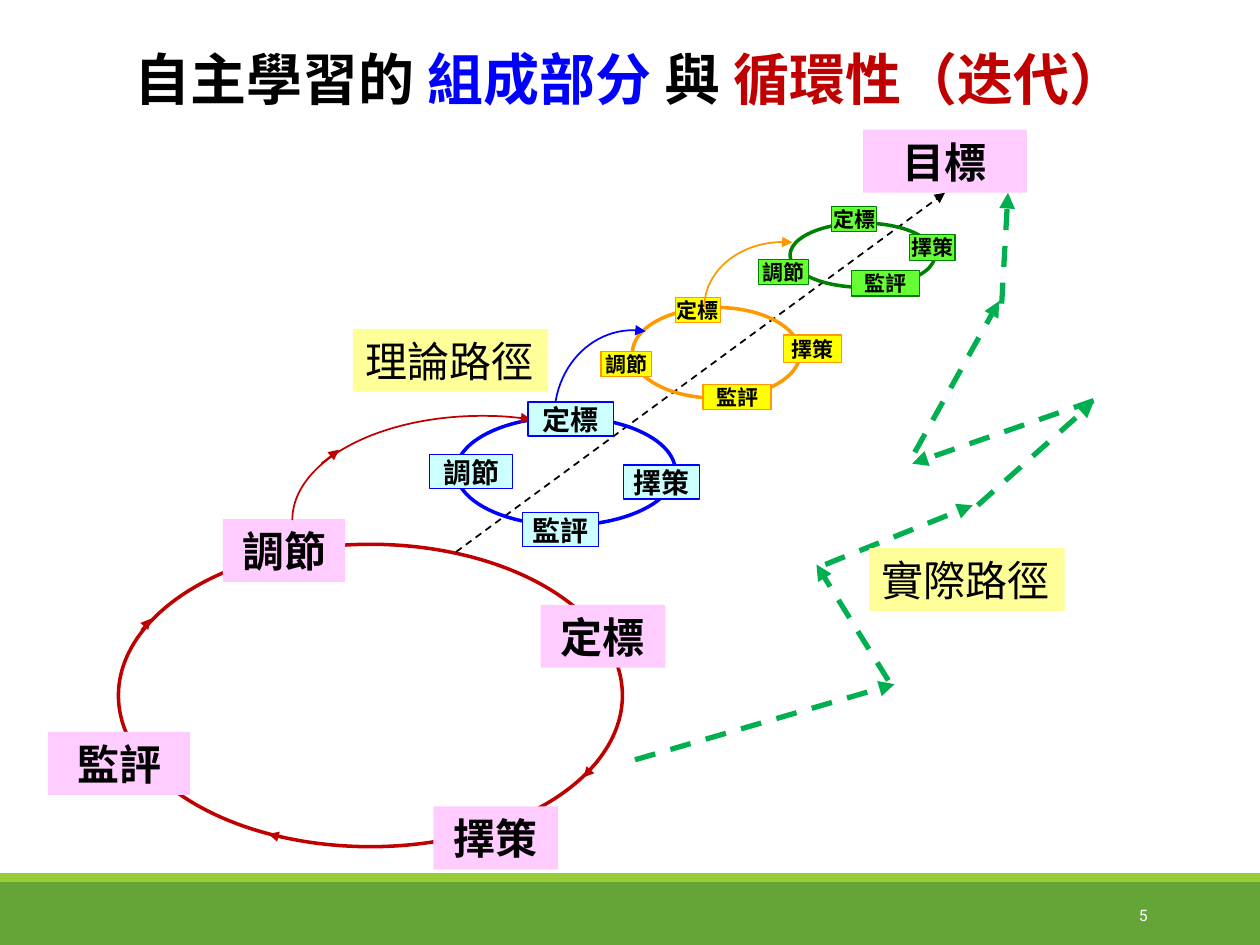
from dataclasses import dataclass
from itertools import starmap
from typing import NamedTuple, Optional

from lxml.etree import SubElement
from pptx import Presentation
from pptx.dml.color import RGBColor
from pptx.enum.dml import MSO_LINE
from pptx.enum.shapes import MSO_CONNECTOR, MSO_SHAPE
from pptx.enum.text import MSO_ANCHOR, PP_ALIGN
from pptx.oxml.ns import qn
from pptx.util import Emu, Inches, Pt

# The grid has 100 columns and 75 rows of equal square cells
COLUMNS, ROWS = 100, 75
CELL = Inches(0.1)
CJK_FONT, NUMBER_FONT = "Noto Sans CJK SC", "Roboto"
BLACK, WHITE = "000000", "FFFFFF"
RED, BLUE, ORANGE, GREEN = "C00000", "0000FF", "FF9900", "008000"
PINK, PALE_YELLOW, ROUTE_GREEN = "FFCCFF", "FFFF99", "00B050"
GOAL_BOTTOM = (75, 15.3)


class Box(NamedTuple):
    left: float
    top: float
    width: float
    height: float


class Run(NamedTuple):
    text: str
    color: str = BLACK


@dataclass
class Style:
    size: float
    bold: bool = True
    font: str = CJK_FONT
    align: PP_ALIGN = PP_ALIGN.CENTER
    inset: tuple = (1, 0.5)
    wrap: bool = True


@dataclass
class Cycle:
    ring: Box
    color: str
    fill: str
    style: Style
    labels: dict
    outlined: bool = True
    arc: Optional[Box] = None
    arc_color: str = BLACK
    arc_end: float = 4.996  # hundred-thousands of 1/60000 degree


TITLE = Style(32)
LARGE = Style(24)
MEDIUM = Style(16, inset=(0, 0))
SMALL = Style(12, inset=(0, 0))
ROUTE_NAME = Style(24, bold=False, align=PP_ALIGN.LEFT, wrap=False)
PAGE_NUMBER = Style(9, bold=False, font=NUMBER_FONT, align=PP_ALIGN.RIGHT)

RED_CYCLE = Cycle(
    Box(9.4, 43.2, 40, 24), RED, PINK, LARGE,
    {"擇策": Box(34.4, 64, 9.9, 5), "監評": Box(3.8, 58.1, 11.3, 5),
     "調節": Box(17.7, 41.2, 9.7, 5), "定標": Box(42.9, 48, 9.9, 5)},
    outlined=False)
SMALLER_CYCLES = [
    Cycle(Box(50.2, 24.4, 13.3, 7.2), ORANGE, "FFFF00", SMALL,
          {"調節": Box(47.7, 27.9, 4, 2), "定標": Box(53.6, 23.6, 3.6, 2),
           "擇策": Box(62.2, 26.6, 4.6, 2.2), "監評": Box(55.8, 30.5, 5.4, 2)},
          arc=Box(43.4, 26.8, 13.7, 12.5), arc_color=BLUE),
    Cycle(Box(62.7, 17.7, 11.5, 5.1), GREEN, "66FF33", SMALL,
          {"調節": Box(60.2, 20.6, 4, 2), "定標": Box(66, 16.4, 3.6, 2),
           "擇策": Box(72.2, 18.6, 3.6, 2.1), "監評": Box(67.6, 21.5, 5.4, 2)},
          arc=Box(57, 18.1, 10.3, 12.5), arc_color=ORANGE),
    Cycle(Box(36.2, 33.1, 17.4, 8.6), BLUE, "CCFFFF", MEDIUM,
          {"調節": Box(34.1, 36.1, 6.6, 2.7), "定標": Box(41.9, 31.9, 6.8, 2.7),
           "擇策": Box(49.5, 36.9, 6, 2.7), "監評": Box(41.5, 40.7, 6, 2.7)},
          arc=Box(30, 26.2, 16.5, 30.1), arc_color=RED, arc_end=15.699),
]
RED_CYCLE_ARROWS = [((47.5, 60.4), (46.3, 61.7)), ((22.5, 66.5), (21.3, 66.2)),
                    ((11.2, 50), (12, 49.1))]
RED_ARC_ARROW = ((25.5, 36.8), (26.9, 35.7))
ACTUAL_ROUTE = [
    ((50.4, 60.3), (71, 54.3)), ((70.5, 54), (64.8, 44.8)),
    ((65.5, 44.8), (77.2, 40.1)), ((77.6, 40.1), (86.8, 31.9)),
    ((86.8, 31.8), (72.4, 36.8)), ((72.6, 35.9), (79.3, 23.9)),
    ((79.5, 24.1), (80, 15.3))]

presentation = Presentation()
presentation.slide_width, presentation.slide_height = COLUMNS * CELL, ROWS * CELL
slide = presentation.slides.add_slide(presentation.slide_layouts[6])


def cells(count: float) -> Emu:
    return Emu(round(count * CELL))


def rgb(color: str) -> RGBColor:
    return RGBColor.from_string(color)


def apply(target, values: dict) -> None:
    for name, value in values.items():
        setattr(target, name, value)


def set_line(shape, color: str, width: float, dash=None) -> None:
    shape.line.color.rgb = rgb(color)
    apply(shape.line, {"width": Pt(width), "dash_style": dash})


def add_arrowhead(shape) -> None:
    SubElement(shape.line._get_or_add_ln(), qn("a:tailEnd"), type="triangle")


def add_figure(kind: MSO_SHAPE, box: Box, fill=None, line=None, width=0.75):
    shape = slide.shapes.add_shape(kind, *map(cells, box))
    shape.shadow.inherit = False
    if fill:
        shape.fill.solid()
        shape.fill.fore_color.rgb = rgb(fill)
    else:
        shape.fill.background()
    if line:
        set_line(shape, line, width)
    else:
        shape.line.fill.background()
    return shape


def write(shape, runs: list[Run], style: Style) -> None:
    side, edge = map(cells, style.inset)
    frame = shape.text_frame
    apply(frame, {"margin_left": side, "margin_right": side, "margin_top": edge,
                  "margin_bottom": edge, "word_wrap": style.wrap,
                  "vertical_anchor": MSO_ANCHOR.MIDDLE})
    paragraph = frame.paragraphs[0]
    paragraph.alignment = style.align
    for text, color in runs:
        run = paragraph.add_run()
        run.text = text
        apply(run.font, {"size": Pt(style.size), "bold": style.bold,
                         "name": style.font})
        run.font.color.rgb = rgb(color)
        SubElement(run.font._element, qn("a:ea"), typeface=style.font)


def add_label(text: str, box: Box, fill: str, style: Style, line=None):
    shape = add_figure(MSO_SHAPE.RECTANGLE, box, fill, line)
    write(shape, [Run(text)], style)
    return shape


def add_text(box: Box, runs: list[Run], style: Style) -> None:
    write(slide.shapes.add_textbox(*map(cells, box)), runs, style)


def add_arrow(start: tuple, end: tuple, color=RED, width=1.0, dash=None):
    arrow = slide.shapes.add_connector(
        MSO_CONNECTOR.STRAIGHT, *map(cells, (*start, *end)))
    set_line(arrow, color, width, dash)
    add_arrowhead(arrow)
    SubElement(arrow._element.spPr, qn("a:effectLst"))
    return arrow


def add_cycle(cycle: Cycle) -> None:
    add_figure(MSO_SHAPE.OVAL, cycle.ring, line=cycle.color, width=2)
    if cycle.arc:
        arc = add_figure(MSO_SHAPE.ARC, cycle.arc, line=cycle.arc_color, width=1)
        arc.rotation = 270
        arc.adjustments[0], arc.adjustments[1] = 162, cycle.arc_end
        add_arrowhead(arc)
    for text, box in cycle.labels.items():
        add_label(text, box, cycle.fill, cycle.style,
                  cycle.color if cycle.outlined else None)


# Footer bands and title
add_figure(MSO_SHAPE.RECTANGLE, Box(0, 70, COLUMNS, 5), "63A537")
add_figure(MSO_SHAPE.RECTANGLE, Box(0, 69.3, COLUMNS, 0.7), "99CB38")
add_text(Box(0, 3, COLUMNS, 6.4),
         [Run("自主學習的 "), Run("組成部分 ", BLUE), Run("與 "),
          Run("循環性（迭代）", RED)], TITLE)

# Goal, first cycle and the straight way between them
goal = add_label("目標", Box(68.5, 10.3, 13, 5), PINK, LARGE)
add_cycle(RED_CYCLE)
list(starmap(add_arrow, RED_CYCLE_ARROWS))
goal_arrow = add_arrow((36.2, 43.8), GOAL_BOTTOM, BLACK, 1, MSO_LINE.DASH)
goal_arrow.end_connect(goal, 2)

# Smaller cycles along the theoretical route
for smaller_cycle in SMALLER_CYCLES:
    add_cycle(smaller_cycle)
add_arrow(*RED_ARC_ARROW)

# Actual route, route names and page number
for start, end in ACTUAL_ROUTE:
    add_arrow(start, end, ROUTE_GREEN, 3, MSO_LINE.DASH)
add_label("實際路徑", Box(69, 43.5, 15.5, 5), PALE_YELLOW, ROUTE_NAME)
add_label("理論路徑", Box(28, 26.1, 15.5, 5), PALE_YELLOW, ROUTE_NAME)
add_text(Box(89.4, 71.4, 2.5, 2.5), [Run("5", WHITE)], PAGE_NUMBER)

presentation.save("out.pptx")
